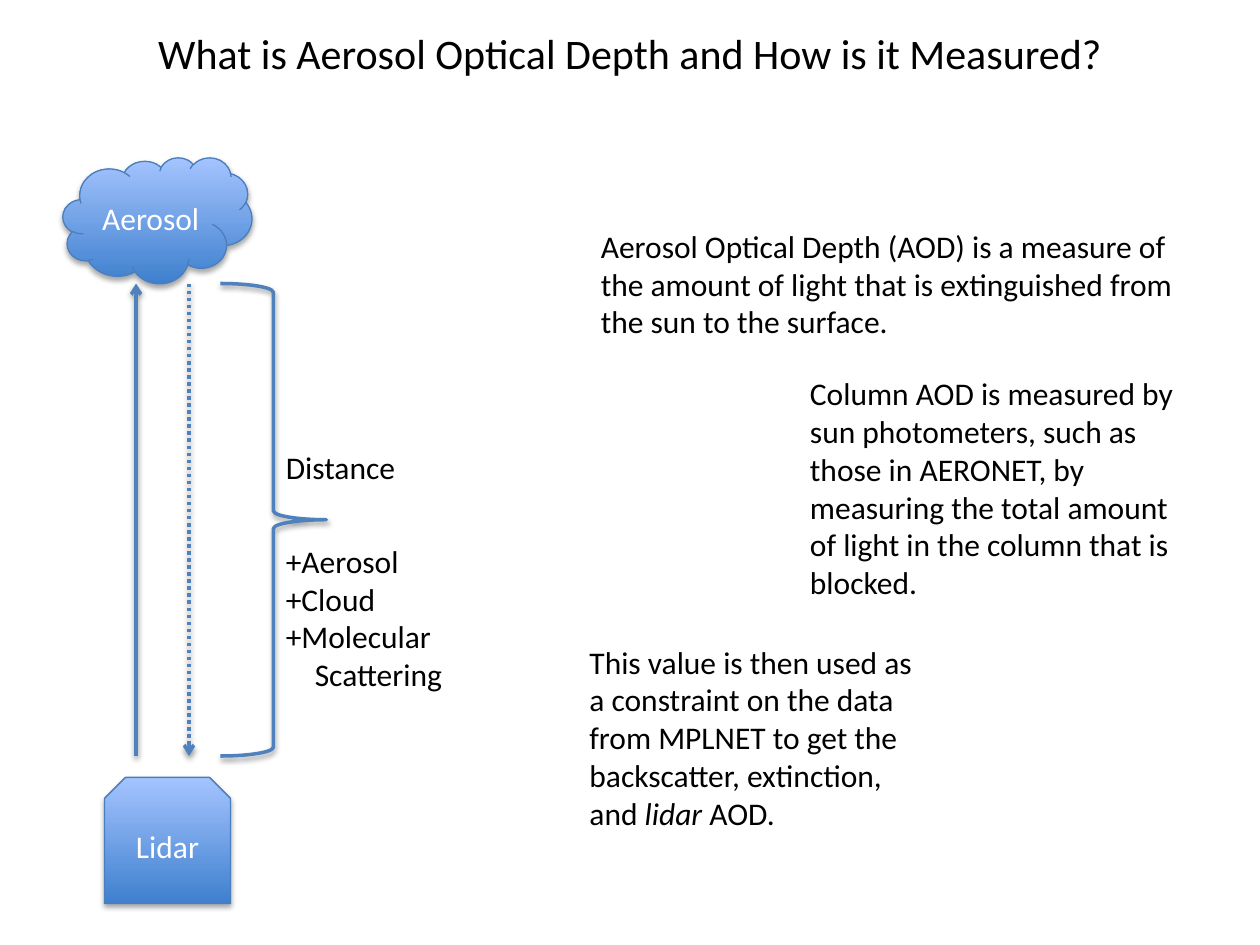
from lxml import etree
from pptx import Presentation
from pptx.dml.color import RGBColor
from pptx.enum import dml, shapes, text
from pptx.oxml import ns
from pptx.util import Inches, Pt

BLACK = RGBColor(0x00, 0x00, 0x00)
WHITE = RGBColor(0xFF, 0xFF, 0xFF)
GRADIENT_DARK = RGBColor(0x3F, 0x80, 0xCE)
GRADIENT_LIGHT = RGBColor(0xA4, 0xC4, 0xFF)
OUTLINE = RGBColor(0x4B, 0x7E, 0xBC)
BEAM = RGBColor(0x4F, 0x81, 0xBD)
LEFT, CENTER = text.PP_ALIGN.LEFT, text.PP_ALIGN.CENTER


def write(shape, paragraphs, size=18, color=BLACK, align=LEFT, italic=(), indents={}):
    """Fill a shape with paragraphs, each a list of runs."""
    frame = shape.text_frame
    frame.word_wrap = True
    for index, runs in enumerate(paragraphs):
        paragraph = frame.paragraphs[0] if index == 0 else frame.add_paragraph()
        paragraph.alignment = align
        if index in indents:
            paragraph._p.get_or_add_pPr().set("marL", str(indents[index]))
        for words in runs:
            run = paragraph.add_run()
            run.text = words
            run.font.name = "Calibri"
            run.font.size = Pt(size)
            run.font.color.rgb = color
            run.font.italic = words in italic


def add_shadow(shape, distance, opacity):
    """Give a shape or connector a soft shadow straight below it."""
    properties = shape._element.spPr
    for old in properties.findall(ns.qn("a:effectLst")):
        properties.remove(old)
    effects = etree.SubElement(properties, ns.qn("a:effectLst"))
    shadow = etree.SubElement(effects, ns.qn("a:outerShdw"), blurRad=str(Pt(3.1)),
                              dist=str(Pt(distance)), dir="5400000", rotWithShape="0")
    color = etree.SubElement(shadow, ns.qn("a:srgbClr"), val="000000")
    etree.SubElement(color, ns.qn("a:alpha"), val=str(opacity * 1000))


presentation = Presentation()
presentation.slide_width, presentation.slide_height = Inches(10), Inches(7.5)
slide = presentation.slides.add_slide(presentation.slide_layouts[6])

# Aerosol cloud and lidar instrument
for label, kind, left, top, width, height in (
    ("Aerosol", shapes.MSO_SHAPE.CLOUD, 0.5, 1.25, 1.5, 1),
    ("Lidar", shapes.MSO_SHAPE.SNIP_2_SAME_RECTANGLE, 0.83, 6.17, 1, 1),
):
    body = slide.shapes.add_shape(kind, Inches(left), Inches(top), Inches(width), Inches(height))
    body.fill.gradient()
    body.fill.gradient_angle = 90
    for stop, color in zip(body.fill.gradient_stops, (GRADIENT_DARK, GRADIENT_LIGHT)):
        stop.color.rgb = color
        stop.position = 0 if color == GRADIENT_DARK else 1
    body.line.color.rgb = OUTLINE
    body.line.width = Pt(0.75)
    add_shadow(body, distance=1.8, opacity=35)
    body.text_frame.vertical_anchor = text.MSO_ANCHOR.MIDDLE
    write(body, [[label]], color=WHITE, align=CENTER)

# Outgoing beam (solid) and returning beam (dotted)
beam_top, beam_bottom = Inches(2.25), Inches(6)
for x, start, end, dash in (
    (1.08, beam_bottom, beam_top, None),
    (1.5, beam_top, beam_bottom, dml.MSO_LINE.ROUND_DOT),
):
    beam = slide.shapes.add_connector(shapes.MSO_CONNECTOR.STRAIGHT,
                                      Inches(x), start, Inches(x), end)
    beam.line.color.rgb = BEAM
    beam.line.width = Pt(2)
    if dash:
        beam.line.dash_style = dash
    etree.SubElement(beam.line._get_or_add_ln(), ns.qn("a:tailEnd"), type="arrow")
    add_shadow(beam, distance=1.6, opacity=38)

# Brace spanning the beam path
brace = slide.shapes.add_shape(shapes.MSO_SHAPE.RIGHT_BRACE, Inches(1.75), beam_top,
                               Inches(0.84), beam_bottom - beam_top)
brace.fill.background()
brace.line.color.rgb = BEAM
brace.line.width = Pt(2)
add_shadow(brace, distance=1.6, opacity=38)

# Title, brace labels and explanations
for left, top, width, height, paragraphs, style in (
    (1, 0.17, 8, 0.5, [["What is Aerosol Optical Depth and How is it Measured?"]],
     {"size": 24, "align": CENTER}),
    (2.17, 4.25, 1.5, 1.31, [["+Aerosol"], ["+Cloud"], ["+Molecular"], ["Scattering"]],
     {"indents": {3: Inches(0.23)}}),
    (4.67, 1.75, 4.75, 1.01,
     [["Aerosol Optical Depth (AOD) is a measure of the amount of light that is "
       "extinguished from the sun to the surface."]], {}),
    (6.33, 2.92, 3.25, 1.92,
     [["Column AOD is measured by sun photometers, such as those in AERONET, by "
       "measuring the total amount of light in the column that is blocked."]], {}),
    (4.58, 5.05, 2.83, 1.62,
     [["This value is then used as a constraint on the data from MPLNET to get the "
       "backscatter, extinction, and ", "lidar", " AOD."]], {"italic": ("lidar",)}),
    (2.17, 3.51, 1.5, 0.4, [["Distance"]], {}),
):
    box = slide.shapes.add_textbox(Inches(left), Inches(top), Inches(width), Inches(height))
    box.text_frame.auto_size = text.MSO_AUTO_SIZE.SHAPE_TO_FIT_TEXT
    write(box, paragraphs, **style)

presentation.save("out.pptx")
